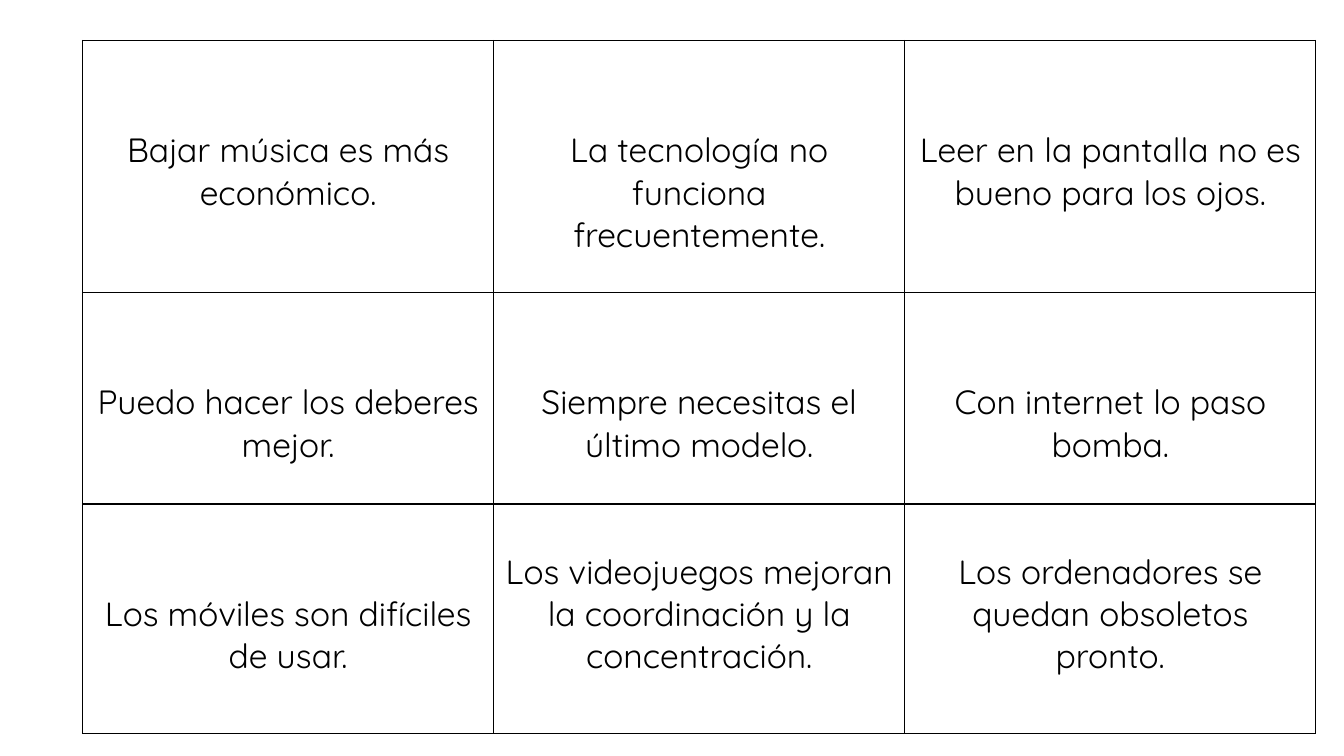
from dataclasses import dataclass

from lxml import etree
from pptx import Presentation
from pptx import util as u
from pptx.dml.color import RGBColor
from pptx.enum import text
from pptx.oxml import ns


@dataclass
class Theme:
    font: str = "Quicksand"
    size: float = 24
    line_height: float = 1.06   # cm, one line of text
    padding_side: float = 0.25  # cm
    padding_top: float = 0.12   # cm
    ink: str = "000000"
    paper: str = "FFFFFF"
    border: float = 1


class SlideWriter:
    def __init__(self, page, theme):
        self.page = page
        self.theme = theme

    def grid(self, left, top, column_width, row_heights, rows):
        """Add a bordered table; each cell is (lines to drop, wording)."""
        columns = len(rows[0])
        frame = self.page.shapes.add_table(
            len(rows), columns, u.Cm(left), u.Cm(top),
            u.Cm(column_width * columns), u.Cm(sum(row_heights)))
        table = frame.table
        table.first_row = table.horz_banding = False
        for column in table.columns:
            column.width = u.Cm(column_width)
        for row, height in zip(table.rows, row_heights):
            row.height = u.Cm(height)
        for cell, (drop, wording) in zip(table.iter_cells(), sum(rows, [])):
            self.borders(cell)
            self.statement(cell, drop, wording)

    def borders(self, cell):
        properties = cell._tc.get_or_add_tcPr()
        for side in ("a:lnL", "a:lnR", "a:lnT", "a:lnB"):
            line = etree.SubElement(properties, ns.qn(side),
                                    w=str(int(u.Pt(self.theme.border))))
            fill = etree.SubElement(line, ns.qn("a:solidFill"))
            etree.SubElement(fill, ns.qn("a:srgbClr"), val=self.theme.ink)

    def statement(self, cell, drop, wording):
        theme = self.theme
        cell.fill.solid()
        cell.fill.fore_color.rgb = RGBColor.from_string(theme.paper)
        cell.margin_left = cell.margin_right = u.Cm(theme.padding_side)
        cell.margin_top = u.Cm(theme.padding_top + drop * theme.line_height)
        cell.margin_bottom = u.Cm(theme.padding_top)
        cell.vertical_anchor = text.MSO_ANCHOR.TOP
        para = cell.text_frame.paragraphs[0]
        para.text = wording
        para.alignment = text.PP_ALIGN.CENTER
        font = para.runs[0].font
        font.name = theme.font
        font.size = u.Pt(theme.size)
        font.color.rgb = RGBColor.from_string(theme.ink)


def main():
    deck = Presentation()
    deck.slide_width, deck.slide_height = u.Cm(33.87), u.Cm(19.05)
    page = deck.slides.add_slide(deck.slide_layouts[6])
    writer = SlideWriter(page, Theme())

    # Opinions about technology; longer ones start one line higher
    opinions = [
        [(2, "Bajar música es más económico."),
         (2, "La tecnología no funciona frecuentemente."),
         (2, "Leer en la pantalla no es bueno para los ojos.")],
        [(2, "Puedo hacer los deberes mejor."),
         (2, "Siempre necesitas el último modelo."),
         (2, "Con internet lo paso bomba.")],
        [(2, "Los móviles son difíciles de usar."),
         (1, "Los videojuegos mejoran la coordinación y la concentración."),
         (1, "Los ordenadores se quedan obsoletos pronto.")],
    ]
    writer.grid(2.08, 1.02, 10.36, [6.35, 5.33, 5.79], opinions)

    deck.save("out.pptx")


if __name__ == "__main__":
    main()
